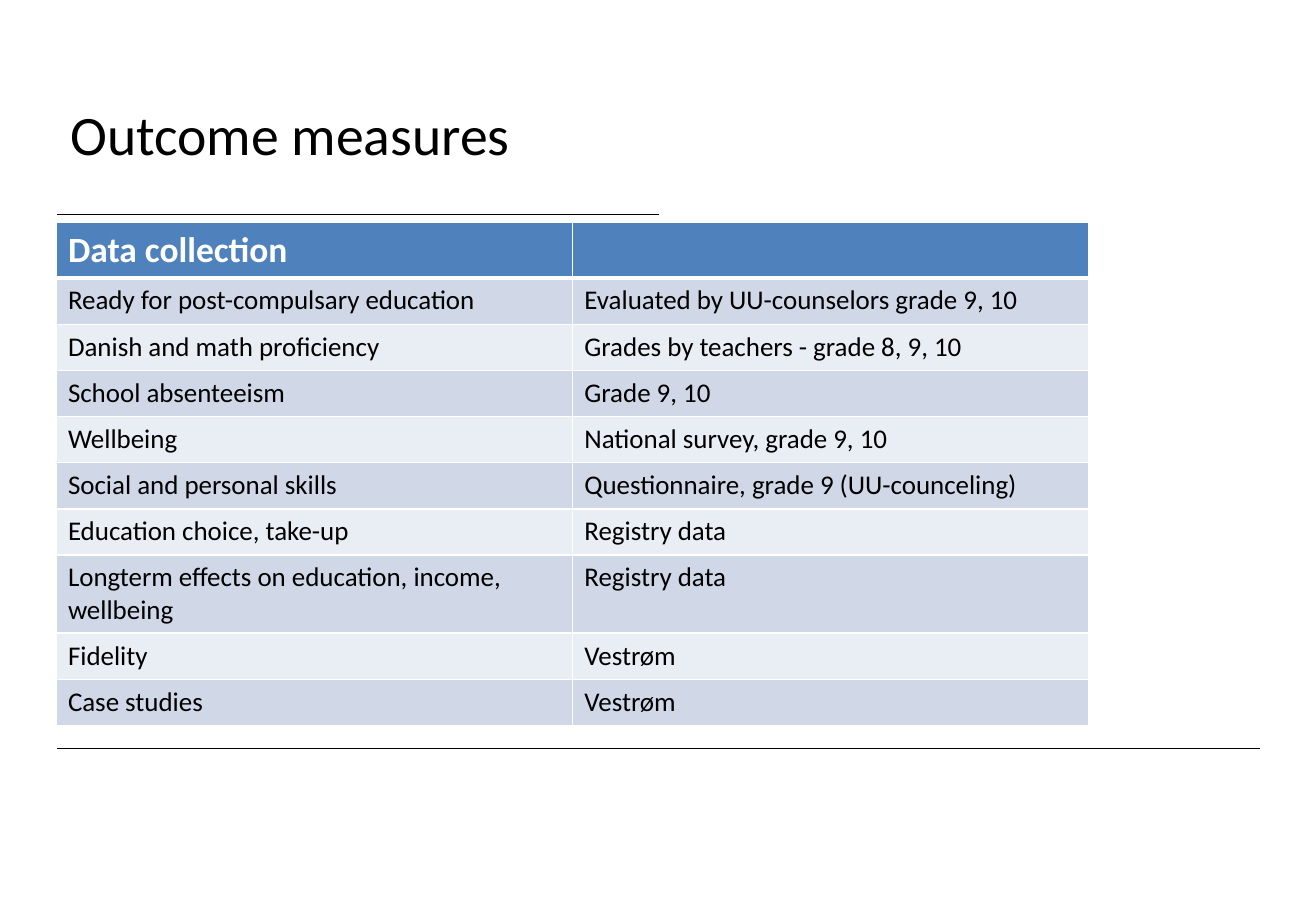
import pptx
import pptx.util
import pptx.dml.color
import pptx.enum.shapes
import pptx.enum.text
import pptx.oxml.ns
from lxml import etree
from pptx.util import Inches

COLORS = {
    "text": "000000",
    "header": "4F81BD",
    "header_text": "FFFFFF",
    "odd_row": "D0D8E8",
    "even_row": "E9EDF4",
    "border": "FFFFFF",
}
FONT = "Calibri"
ROWS = [
    ("Data collection", ""),
    ("Ready for post-compulsary education", "Evaluated by UU-counselors grade 9, 10"),
    ("Danish and math proficiency", "Grades by teachers - grade 8, 9, 10"),
    ("School absenteeism", "Grade 9, 10"),
    ("Wellbeing", "National survey, grade 9, 10"),
    ("Social and personal skills", "Questionnaire, grade 9 (UU-counceling)"),
    ("Education choice, take-up", "Registry data"),
    ("Longterm effects on education, income, wellbeing", "Registry data"),
    ("Fidelity", "Vestrøm"),
    ("Case studies", "Vestrøm"),
]
HEADER_ROW, TWO_LINE_ROW = 0, 7
ROW_HEIGHTS = {HEADER_ROW: 0.46, TWO_LINE_ROW: 0.64}


def rgb(name):
    return pptx.dml.color.RGBColor.from_string(COLORS[name])


def set_borders(cell, widths):
    """Add solid cell borders; widths maps lnL, lnR, lnT and lnB to points."""
    properties = cell._tc.get_or_add_tcPr()
    for index, (side, width) in enumerate(widths.items()):
        line = etree.Element(pptx.oxml.ns.qn("a:" + side), w=str(pptx.util.Pt(width)))
        fill = etree.SubElement(line, pptx.oxml.ns.qn("a:solidFill"))
        etree.SubElement(fill, pptx.oxml.ns.qn("a:srgbClr"), val=COLORS["border"])
        properties.insert(index, line)


presentation = pptx.Presentation()
presentation.slide_width = Inches(10.83)
presentation.slide_height = Inches(7.5)
slide = presentation.slides.add_slide(presentation.slide_layouts[5])

# Rules under the title and under the table
for right, top in ((10.37, 6.16), (5.42, 1.76)):
    rule = slide.shapes.add_connector(
        pptx.enum.shapes.MSO_CONNECTOR.STRAIGHT,
        Inches(0.47), Inches(top), Inches(right), Inches(top))
    rule.line.color.rgb = rgb("text")
    rule.line.width = pptx.util.Pt(0.25)
    etree.SubElement(rule._element.spPr, pptx.oxml.ns.qn("a:effectLst"))

# Title
title = slide.shapes.title
title.left, title.top = Inches(0.46), Inches(0.76)
title.width, title.height = Inches(4.96), Inches(0.79)
frame = title.text_frame
frame.text = "Outcome measures"
frame.word_wrap = True
frame.auto_size = pptx.enum.text.MSO_AUTO_SIZE.NONE
frame.vertical_anchor = pptx.enum.text.MSO_ANCHOR.TOP
frame.margin_left = frame.margin_right = Inches(0.12)
frame.margin_top = frame.margin_bottom = Inches(0.06)
paragraph = frame.paragraphs[0]
paragraph.alignment = pptx.enum.text.PP_ALIGN.LEFT
paragraph.font.name = FONT
paragraph.font.size = pptx.util.Pt(33)
paragraph.font.color.rgb = rgb("text")

# Outcome table
heights = [ROW_HEIGHTS.get(index, 0.38) for index in range(len(ROWS))]
table = slide.shapes.add_table(
    len(ROWS), 2, Inches(0.46), Inches(1.83), Inches(8.5), Inches(sum(heights))).table
for row_index, texts in enumerate(ROWS):
    table.rows[row_index].height = Inches(heights[row_index])
    is_header = row_index == HEADER_ROW
    if is_header:
        fill_name = "header"
    else:
        fill_name = "odd_row" if row_index % 2 else "even_row"
    for column_index, text in enumerate(texts):
        cell = table.cell(row_index, column_index)
        cell.text = text
        cell.fill.solid()
        cell.fill.fore_color.rgb = rgb(fill_name)
        set_borders(cell, {
            "lnL": 1,
            "lnR": 1,
            "lnT": 3 if row_index == HEADER_ROW + 1 else 1,
            "lnB": 3 if is_header else 1,
        })
        font = cell.text_frame.paragraphs[0].font
        font.name = FONT
        font.size = pptx.util.Pt(21 if is_header else 16)
        font.bold = is_header
        font.color.rgb = rgb("header_text" if is_header else "text")

presentation.save("out.pptx")
